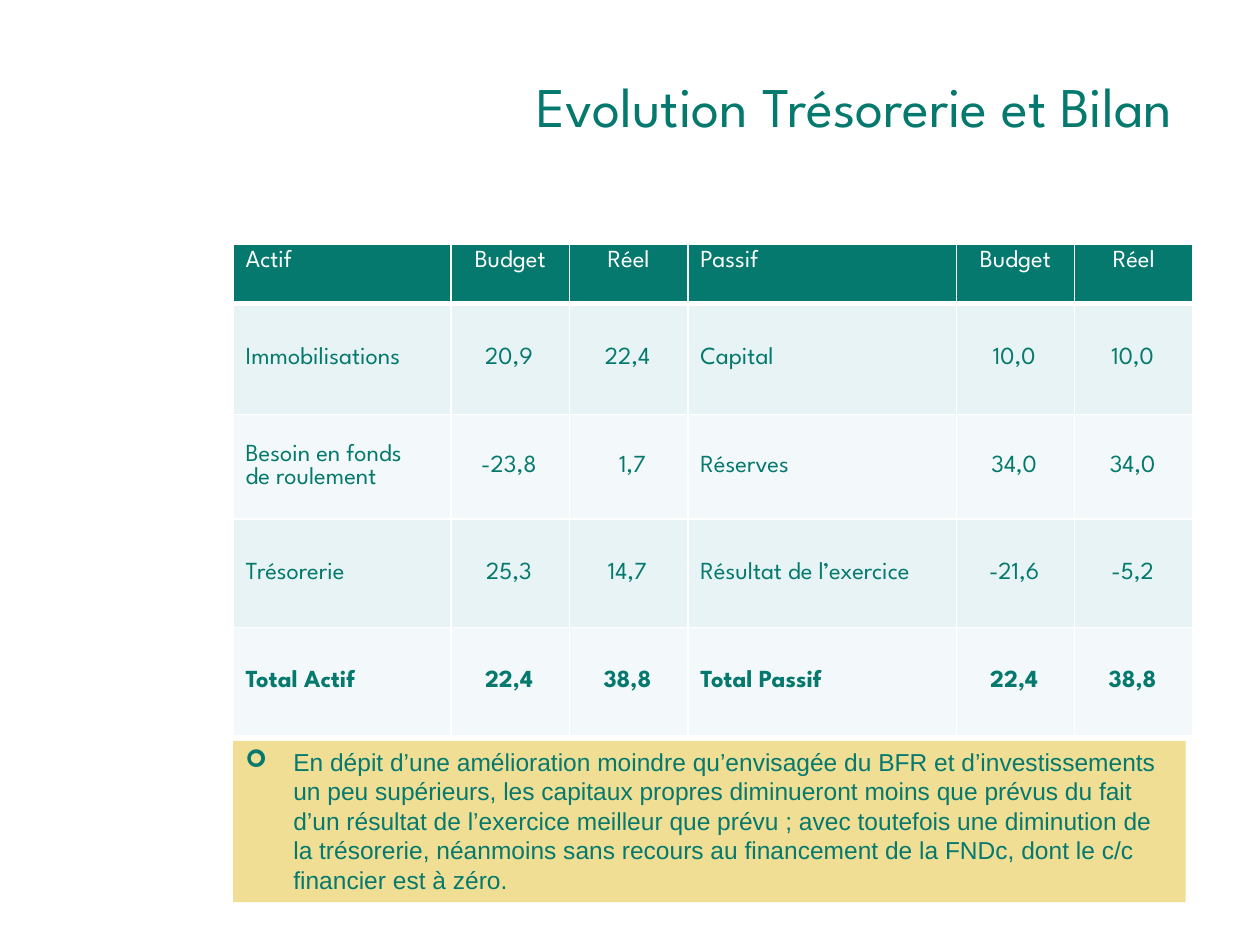
from dataclasses import dataclass

from lxml.etree import SubElement
from pptx import Presentation
from pptx.dml.color import RGBColor
from pptx.enum.shapes import MSO_SHAPE
from pptx.enum.text import MSO_ANCHOR as ANCHOR, PP_ALIGN as ALIGN
from pptx.oxml.ns import qn
from pptx.util import Inches, Pt

GREEN, WHITE, SAND = "05796E", "FFFFFF", "EFDE94"
BANDS = ("E7F3F4", "F3F9FA")
TITLE_FONT, BODY_FONT = "League Spartan", "Arial"
COLUMN_WIDTHS = (1.73, 0.94, 0.94, 2.13, 0.94, 0.94)
LABEL_COLUMNS = (0, 3)


@dataclass
class Row:
    height: float
    cells: tuple[str, ...]
    bold: bool = False


ROWS = (
    Row(0.47, ("Actif", "Budget", "Réel", "Passif", "Budget", "Réel")),
    Row(0.88, ("Immobilisations", "20,9", "22,4", "Capital", "10,0", "10,0")),
    Row(0.83, ("Besoin en fonds\nde roulement", "-23,8", "1,7",
               "Réserves", "34,0", "34,0")),
    Row(0.86, ("Trésorerie", "25,3", "14,7",
               "Résultat de l’exercice", "-21,6", "-5,2")),
    Row(0.86, ("Total Actif", "22,4", "38,8", "Total Passif", "22,4", "38,8"),
        bold=True),
)

COMMENT = (
    "En dépit d’une amélioration moindre qu’envisagée du BFR et "
    "d’investissements un peu supérieurs, les capitaux propres diminueront "
    "moins que prévus du fait d’un résultat de l’exercice meilleur que prévu ; "
    "avec toutefois une diminution de la trésorerie, néanmoins sans recours au "
    "financement de la FNDc, dont le c/c financier est à zéro."
)


def rgb(color: str) -> RGBColor:
    return RGBColor.from_string(color)


def write(tf, text: str, *, size=14, font=TITLE_FONT, color=GREEN,
          bold=False, align=ALIGN.LEFT) -> None:
    tf.text = text
    for p in tf.paragraphs:
        p.alignment = align
        for r in p.runs:
            r.font.size, r.font.name, r.font.bold = Pt(size), font, bold
            r.font.color.rgb = rgb(color)


def add_borders(cell, bottom: float) -> None:
    """Draw white cell borders, 1 pt wide except at the bottom."""
    tc_pr = cell._tc.get_or_add_tcPr()
    for side, width in (("L", 1), ("R", 1), ("T", 1), ("B", bottom)):
        ln = SubElement(tc_pr, qn(f"a:ln{side}"), w=str(Pt(width)))
        fill = SubElement(ln, qn("a:solidFill"))
        SubElement(fill, qn("a:srgbClr"), val=WHITE)


def add_balance_table(slide) -> None:
    frame = slide.shapes.add_table(
        len(ROWS), len(COLUMN_WIDTHS), Inches(1.85), Inches(1.94),
        Inches(sum(COLUMN_WIDTHS)), Inches(sum(row.height for row in ROWS)))
    table = frame.table
    table.horz_banding = False
    for column, width in zip(table.columns, COLUMN_WIDTHS):
        column.width = Inches(width)
    for i, row in enumerate(ROWS):
        header = i == 0
        table.rows[i].height = Inches(row.height)
        for j, text in enumerate(row.cells):
            cell = table.cell(i, j)
            add_borders(cell, bottom=3 if header else 1)
            cell.fill.solid()
            cell.fill.fore_color.rgb = rgb(GREEN if header else BANDS[(i - 1) % 2])
            if not header:
                cell.vertical_anchor = ANCHOR.MIDDLE
                cell.margin_right = Inches(0.12)
            write(cell.text_frame, text, color=WHITE if header else GREEN,
                  bold=row.bold,
                  align=ALIGN.LEFT if j in LABEL_COLUMNS else ALIGN.CENTER)
    table.cell(2, 2).margin_left = Inches(0.18)


def add_comment(slide) -> None:
    sp = slide.shapes.add_shape(MSO_SHAPE.RECTANGLE, Inches(1.85), Inches(5.88),
                                Inches(7.56), Inches(1.28))
    sp.shadow.inherit = False
    sp.fill.solid()
    sp.fill.fore_color.rgb = rgb(SAND)
    sp.line.fill.background()
    tf = sp.text_frame
    tf.word_wrap = True
    tf.vertical_anchor = ANCHOR.TOP
    write(tf, COMMENT, font=BODY_FONT)
    p_pr = tf.paragraphs[0]._p.get_or_add_pPr()
    indent = Inches(0.38)
    p_pr.set("marL", str(indent))
    p_pr.set("indent", str(-indent))
    SubElement(p_pr, qn("a:buFont"), typeface="Wingdings")
    SubElement(p_pr, qn("a:buChar"), char="➢")


def main() -> None:
    prs = Presentation()
    prs.slide_width, prs.slide_height = Inches(10), Inches(7.5)
    slide = prs.slides.add_slide(prs.slide_layouts[5])
    title = slide.shapes.title
    title.left, title.top = Inches(0), Inches(0.52)
    title.width, title.height = Inches(9.41), Inches(0.63)
    title.text_frame.vertical_anchor = ANCHOR.MIDDLE
    write(title.text_frame, "Evolution Trésorerie et Bilan", size=32,
          align=ALIGN.RIGHT)
    add_balance_table(slide)
    add_comment(slide)
    prs.save("out.pptx")


if __name__ == "__main__":
    main()
